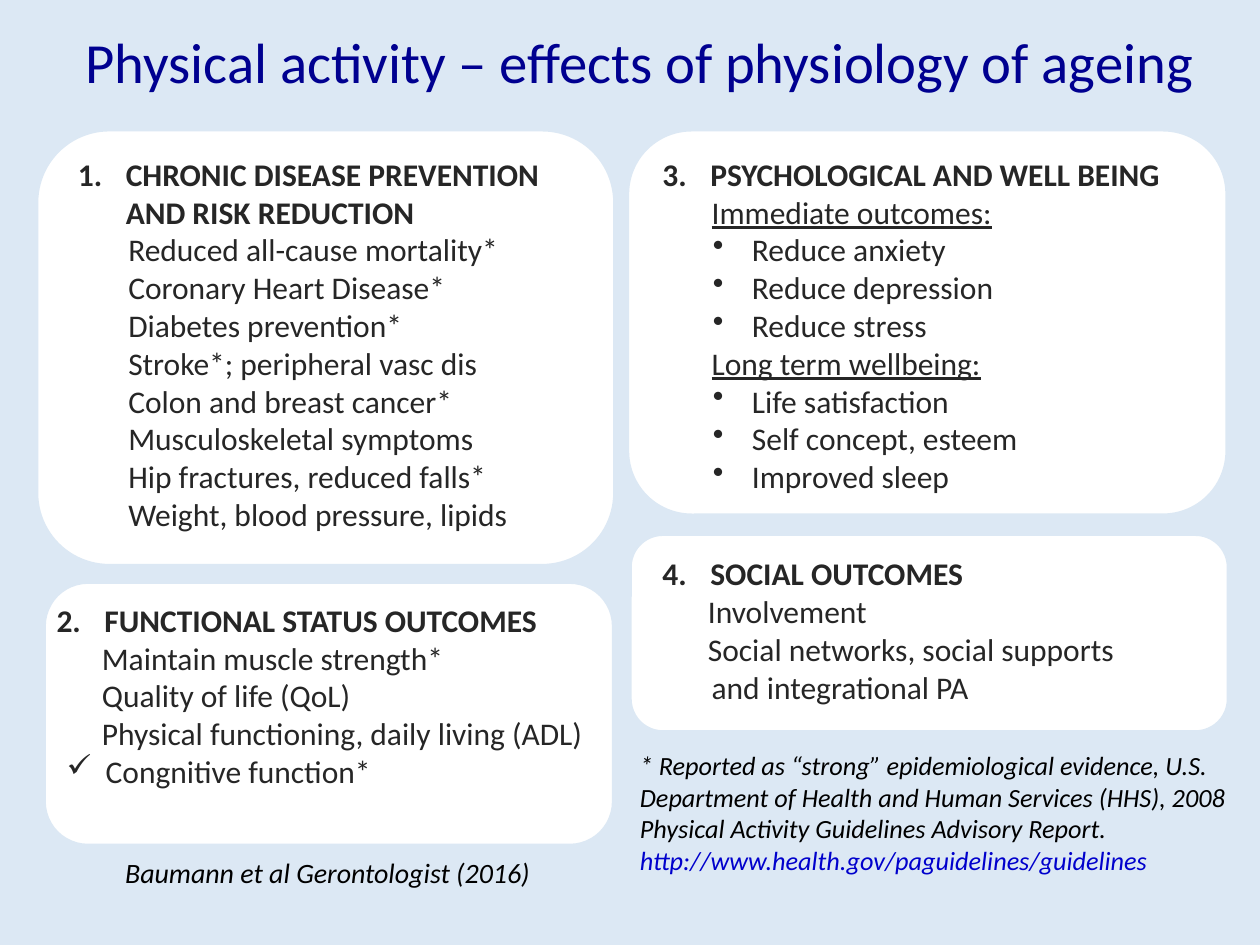
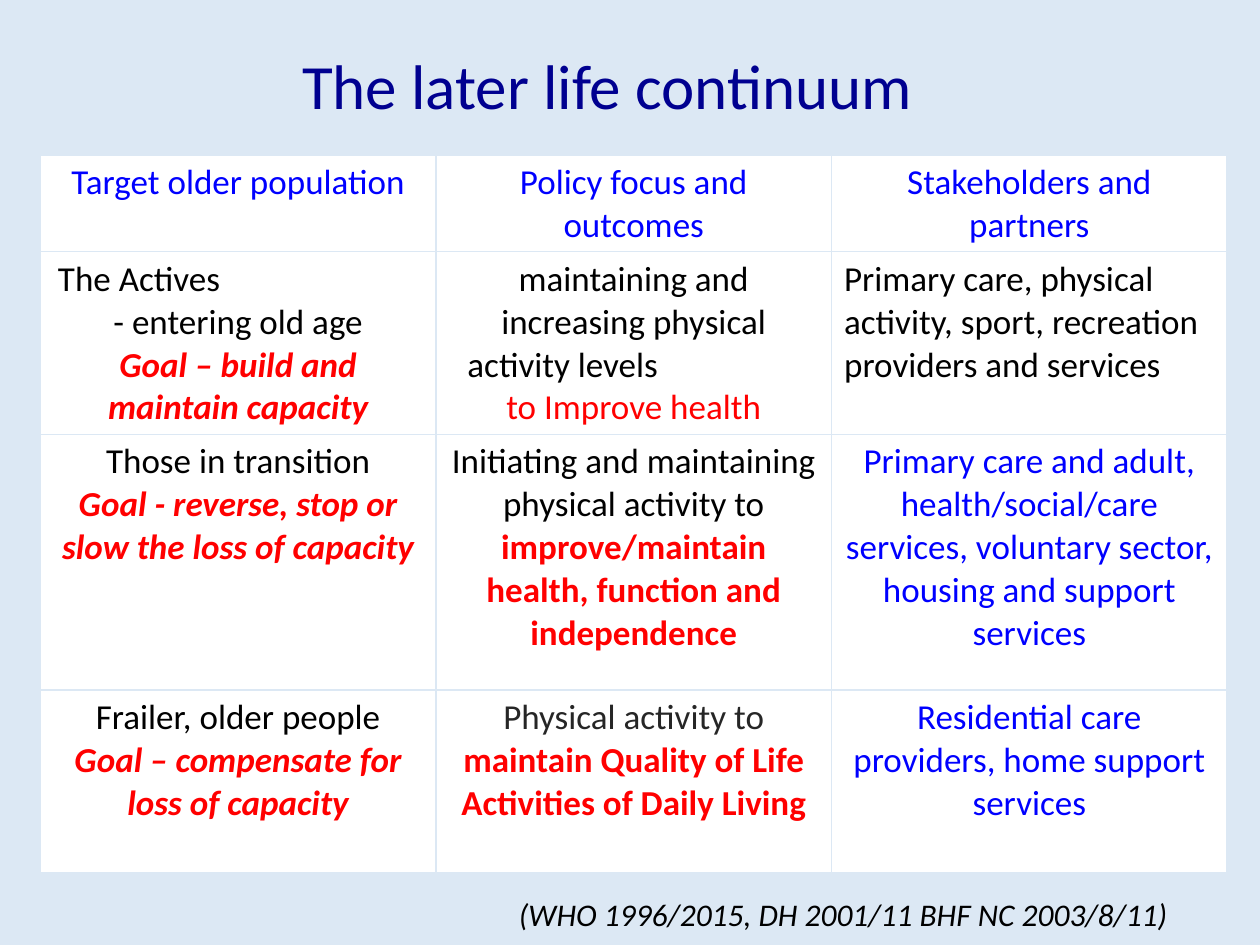
from lxml import etree
from pptx import Presentation
from pptx.dml.color import RGBColor
from pptx.enum.shapes import MSO_SHAPE
from pptx.enum.text import MSO_ANCHOR, PP_ALIGN
from pptx.oxml.ns import qn
from pptx.util import Inches, Pt

LEFT, CENTER = PP_ALIGN.LEFT, PP_ALIGN.CENTER
TOP, MIDDLE = MSO_ANCHOR.TOP, MSO_ANCHOR.MIDDLE
ROUNDED = MSO_SHAPE.ROUNDED_RECTANGLE

FONT = "Calibri"
PALE_BLUE = RGBColor(0xDC, 0xE8, 0xF4)
WHITE = RGBColor(0xFF, 0xFF, 0xFF)
BLACK = RGBColor(0, 0, 0)
CHARCOAL = RGBColor(0x26, 0x26, 0x26)
NAVY = RGBColor(0, 0, 0x90)
LINK_BLUE = RGBColor(0, 0, 0xCC)
BLUE = RGBColor(0, 0, 0xFF)
RED = RGBColor(0xFF, 0, 0)

SLIDE_WIDTH, SLIDE_HEIGHT = Inches(10), Inches(7.5)

# Panel box, text box (percent of the slide), heading and item groups.
# A group is (items, left margin, first-line indent, bullet, underline).
ACTIVITY_PANELS = [
    ((50, 56.53, 47.5, 20.93), (51.6, 58, 38.4, 17.47), 4, "SOCIAL OUTCOMES", [
        (["Involvement", "Social networks, social supports and integrational PA"],
         0.39, -0.03, None, False)]),
    ((49.8, 13.73, 47.6, 40.8), (51.6, 15.73, 42.4, 37.73), 3,
     "PSYCHOLOGICAL AND WELL BEING", [
        (["Immediate outcomes:"], 0.39, 0, None, True),
        (["Reduce anxiety", "Reduce depression", "Reduce stress"], 0.71, -0.31, "•", False),
        (["Long term wellbeing:"], 0.39, 0, None, True),
        (["Life satisfaction", "Self concept, esteem", "Improved sleep"],
         0.71, -0.31, "•", False)]),
    ((3.5, 61.6, 45.2, 27.87), (3.5, 62.93, 46.5, 21.6), 2,
     "FUNCTIONAL STATUS OUTCOMES", [
        (["Maintain muscle strength*", "Quality of life (QoL)",
          "Physical functioning, daily living (ADL)"], 0.36, 0, None, False),
        (["Congnitive function*"], 0.39, -0.31, "✓", False)]),
    ((2.9, 13.73, 45.9, 46.13), (5.2, 15.73, 40.3, 41.73), 1,
     "CHRONIC DISEASE PREVENTION AND RISK REDUCTION", [
        (["Reduced all-cause mortality*", "Coronary Heart Disease*",
          "Diabetes prevention*", "Stroke*; peripheral vasc dis",
          "Colon and breast cancer*", "Musculoskeletal symptoms",
          "Hip fractures, reduced falls*", "Weight, blood pressure, lipids"],
         0.43, -0.03, None, False)]),
]

PLAIN = {"color": BLACK}
PARTNER = {"color": BLUE}
GOAL = {"color": RED, "bold": True, "italic": True}
OUTCOME = {"color": RED, "bold": True}

# Each cell lists paragraphs; each paragraph is (runs, paragraph format).
CONTINUUM_ROWS = [
    [[([(heading, PARTNER)], {})] for heading in
     ("Target older population", "Policy focus and outcomes", "Stakeholders and partners")],
    [
        [([("The Actives", PLAIN)], {"align": LEFT, "margin": 0.04}),
         ([("- entering old age", PLAIN)], {}),
         ([("Goal – build and maintain capacity", GOAL)], {})],
        [([("maintaining and increasing physical", PLAIN)], {}),
         ([("activity levels", PLAIN)], {"align": LEFT, "margin": 0.15}),
         ([("to Improve health", {"color": RED})], {})],
        [([("Primary care, physical activity, sport, recreation providers and services",
            PLAIN)], {"align": LEFT})],
    ],
    [
        [([("Those in transition", PLAIN)], {}),
         ([("Goal - reverse, stop or slow the loss of capacity", GOAL)], {})],
        [([("Initiating and maintaining physical activity to ", PLAIN),
           ("improve/maintain health, function and independence", OUTCOME)], {})],
        [([("Primary care and adult, health/social/care services, voluntary sector, "
            "housing and support services", PARTNER)], {})],
    ],
    [
        [([("Frailer, older people", PLAIN)], {}),
         ([("Goal – compensate for loss of capacity", GOAL)], {})],
        [([("Physical activity to ", {"color": CHARCOAL}),
           ("maintain Quality of Life Activities of Daily Living", OUTCOME)], {})],
        [([("Residential care providers, home support services", PARTNER)], {})],
    ],
]
CONTINUUM_ROW_SHARES = [9.87, 19.33, 27.07, 19.33]


def across(percent):
    return round(SLIDE_WIDTH * percent / 100)


def down(percent):
    return round(SLIDE_HEIGHT * percent / 100)


def place(box):
    """Turn a box in percent of the slide into left, top, width, height."""
    left, top, width, height = box
    return across(left), down(top), across(width), down(height)


def write_run(paragraph, text, size=18, color=BLACK, bold=False, italic=False,
              underline=False):
    run = paragraph.add_run()
    run.text = text
    font = run.font
    font.name, font.size = FONT, Pt(size)
    font.bold, font.italic, font.underline = bold, italic, underline
    font.color.rgb = color


def next_paragraph(frame, align=LEFT, margin=0, indent=0, bullet=None, number=None):
    """Return a fresh paragraph, reusing the empty one of a new text frame."""
    first = frame.paragraphs[0]
    paragraph = frame.add_paragraph() if first.runs else first
    paragraph.alignment = align
    properties = paragraph._p.get_or_add_pPr()
    properties.set("marL", str(Inches(margin)))
    properties.set("indent", str(Inches(indent)))
    if number:
        etree.SubElement(properties, qn("a:buAutoNum"),
                         type="arabicPeriod", startAt=str(number))
    elif bullet:
        etree.SubElement(properties, qn("a:buChar"), char=bullet)
    return paragraph


def add_text_frame(slide, box, anchor=TOP):
    frame = slide.shapes.add_textbox(*place(box)).text_frame
    frame.word_wrap = True
    frame.vertical_anchor = anchor
    return frame


def add_line(slide, box, text, anchor=TOP, **text_format):
    """Add a text box holding one centred paragraph."""
    frame = add_text_frame(slide, box, anchor)
    write_run(next_paragraph(frame, CENTER), text, **text_format)


def add_titled_slide(presentation, title, box, size):
    slide = presentation.slides.add_slide(presentation.slide_layouts[6])
    fill = slide.background.fill
    fill.solid()
    fill.fore_color.rgb = PALE_BLUE
    add_line(slide, box, title, MIDDLE, size=size, color=NAVY)
    return slide


def add_panel(slide, panel_box, text_box, number, heading, groups):
    panel = slide.shapes.add_shape(ROUNDED, *place(panel_box))
    panel.shadow.inherit = False
    panel.fill.solid()
    panel.fill.fore_color.rgb = WHITE
    panel.line.color.rgb = PALE_BLUE
    panel.line.width = Pt(2)

    frame = add_text_frame(slide, text_box)
    paragraph = next_paragraph(frame, margin=0.38, indent=-0.38, number=number)
    write_run(paragraph, heading, color=CHARCOAL, bold=True)
    for items, margin, indent, bullet, underline in groups:
        for item in items:
            paragraph = next_paragraph(frame, LEFT, margin, indent, bullet)
            write_run(paragraph, item, color=CHARCOAL, underline=underline)


def set_cell_borders(cell, color, width):
    properties = cell._tc.get_or_add_tcPr()
    for position, side in enumerate(("lnL", "lnR", "lnT", "lnB")):
        line = etree.Element(qn(f"a:{side}"), w=str(Pt(width)))
        fill = etree.SubElement(line, qn("a:solidFill"))
        etree.SubElement(fill, qn("a:srgbClr"), val=str(color))
        properties.insert(position, line)


def fill_cell(cell, paragraphs):
    cell.fill.solid()
    cell.fill.fore_color.rgb = WHITE
    set_cell_borders(cell, PALE_BLUE, 1)
    for runs, paragraph_format in paragraphs:
        paragraph = next_paragraph(cell.text_frame, **{"align": CENTER, **paragraph_format})
        for text, text_format in runs:
            write_run(paragraph, text, size=20, **text_format)


def add_table(slide, box, rows, row_shares):
    column_count = len(rows[0])
    table = slide.shapes.add_table(len(rows), column_count, *place(box)).table
    for column in table.columns:
        column.width = across(box[2] / column_count)
    for row, share, contents in zip(table.rows, row_shares, rows):
        row.height = down(share)
        for cell, paragraphs in zip(row.cells, contents):
            fill_cell(cell, paragraphs)


def build_activity_slide(presentation):
    slide = add_titled_slide(
        presentation, "Physical activity – effects of physiology of ageing",
        (5.2, 0.8, 91.1, 11.2), 32.4)
    for panel in ACTIVITY_PANELS:
        add_panel(slide, *panel)
    footnote = add_text_frame(slide, (49.8, 78.67, 49.1, 14.8))
    for text, color in (
        ("* Reported as “strong” epidemiological evidence, U.S. Department of Health and "
         "Human Services (HHS), 2008 Physical Activity Guidelines Advisory Report.", BLACK),
        ("http://www.health.gov/paguidelines/guidelines", LINK_BLUE),
    ):
        write_run(next_paragraph(footnote), text, size=15, color=color, italic=True)
    add_line(slide, (3.1, 89.87, 45.8, 4.93), "Baumann et al Gerontologist (2016)",
             size=16, italic=True)


def build_continuum_slide(presentation):
    slide = add_titled_slide(presentation, "The later life continuum",
                             (1.4, 1.47, 93.6, 14.93), 36)
    add_table(slide, (3.2, 16.4, 94.2, 75.6), CONTINUUM_ROWS, CONTINUUM_ROW_SHARES)
    add_line(slide, (35.3, 94, 63.3, 5.33),
             "(WHO 1996/2015, DH 2001/11 BHF NC 2003/8/11)", italic=True)


def main():
    presentation = Presentation()
    presentation.slide_width, presentation.slide_height = SLIDE_WIDTH, SLIDE_HEIGHT
    build_activity_slide(presentation)
    build_continuum_slide(presentation)
    presentation.save("out.pptx")


if __name__ == "__main__":
    main()
